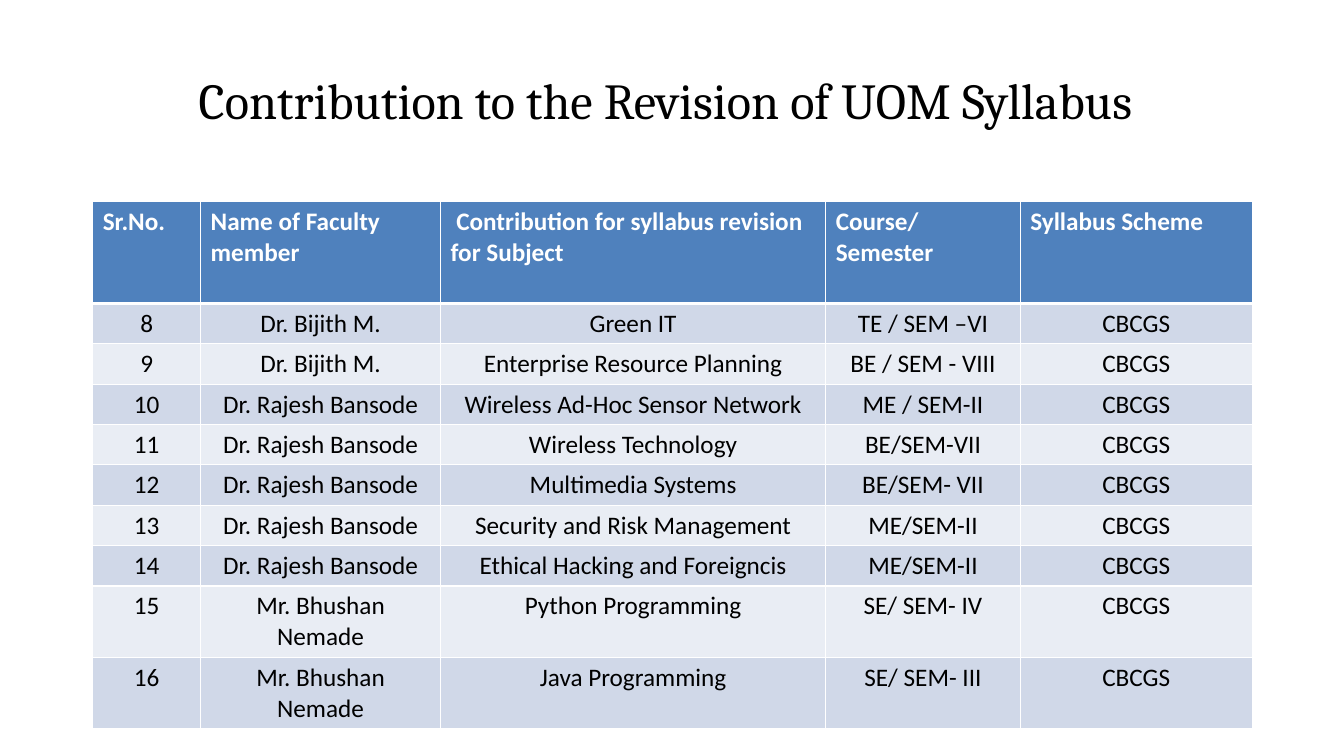
"""Build the slide on contributions to the syllabus revision."""
from pptx import Presentation
from pptx import util as u
from pptx.dml import color
from pptx.enum import text
from pptx.oxml import ns
from lxml import etree

TITLE = "Contribution to the Revision of UOM Syllabus"
HEADER = ("Sr.No.", "Name of Faculty member",
          " Contribution for syllabus revision for Subject",
          "Course/\nSemester", "Syllabus Scheme")
FIRST_NO = 8
SCHEME = "CBCGS"
ENTRIES = [
    ("Dr. Bijith M.", "Green IT", "TE / SEM –VI"),
    ("Dr. Bijith M.", "Enterprise Resource Planning", "BE / SEM - VIII"),
    ("Dr. Rajesh Bansode", "Wireless Ad-Hoc Sensor Network", "ME / SEM-II"),
    ("Dr. Rajesh Bansode", "Wireless Technology", "BE/SEM-VII"),
    ("Dr. Rajesh Bansode", "Multimedia Systems", "BE/SEM- VII"),
    ("Dr. Rajesh Bansode", "Security and Risk Management", "ME/SEM-II"),
    ("Dr. Rajesh Bansode", "Ethical Hacking and Foreigncis", "ME/SEM-II"),
    ("Mr. Bhushan Nemade", "Python Programming", "SE/ SEM- IV"),
    ("Mr. Bhushan Nemade", "Java Programming", "SE/ SEM- III"),
]
COL_WIDTHS = (1.07, 2.38, 3.82, 1.93, 2.3)
ROW_HEIGHTS = [1.01] + [0.4] * 7 + [0.71] * 2
BANDS = ("D0D8E8", "E9EDF4")
HEADER_FILL, WHITE, BLACK = "4F81BD", "FFFFFF", "000000"


def rgb(value):
    return color.RGBColor.from_string(value)


def style(p, font, size, hue, align, bold=False):
    p.alignment = align
    p.font.name, p.font.size, p.font.bold = font, u.Pt(size), bold
    p.font.color.rgb = rgb(hue)


def add_borders(cell, top, bottom):
    tc_pr = cell._tc.get_or_add_tcPr()
    for side, width in (("L", 1), ("R", 1), ("T", top), ("B", bottom)):
        ln = etree.SubElement(tc_pr, ns.qn("a:ln" + side), w=str(u.Pt(width)))
        fill = etree.SubElement(ln, ns.qn("a:solidFill"))
        etree.SubElement(fill, ns.qn("a:srgbClr"), val=WHITE)


def add_title(s):
    box = s.shapes.add_textbox(u.Inches(0.6), u.Inches(0.36), u.Inches(12), u.Inches(1.25))
    tf = box.text_frame
    tf.word_wrap = True
    tf.vertical_anchor = text.MSO_ANCHOR.MIDDLE
    tf.text = TITLE
    style(tf.paragraphs[0], "Cambria", 36, BLACK, text.PP_ALIGN.CENTER)


def add_syllabus_table(s):
    rows = [HEADER] + [(str(n), *entry, SCHEME) for n, entry in enumerate(ENTRIES, FIRST_NO)]
    table = s.shapes.add_table(len(rows), len(HEADER), u.Inches(0.92), u.Inches(2),
                               u.Inches(sum(COL_WIDTHS)), u.Inches(sum(ROW_HEIGHTS))).table
    for col, width in zip(table.columns, COL_WIDTHS):
        col.width = u.Inches(width)
    for i, (values, height) in enumerate(zip(rows, ROW_HEIGHTS)):
        table.rows[i].height = u.Inches(height)
        head = i == 0
        align = text.PP_ALIGN.LEFT if head else text.PP_ALIGN.CENTER
        for cell, value in zip(table.rows[i].cells, values):
            cell.text = value
            add_borders(cell, 3 if i == 1 else 1, 3 if head else 1)
            cell.fill.solid()
            cell.fill.fore_color.rgb = rgb(HEADER_FILL if head else BANDS[(i - 1) % 2])
            for p in cell.text_frame.paragraphs:
                style(p, "Calibri", 18, WHITE if head else BLACK, align, head)


def main():
    prs = Presentation()
    prs.slide_width, prs.slide_height = u.Inches(13.33), u.Inches(7.5)
    s = prs.slides.add_slide(prs.slide_layouts[6])
    add_title(s)
    add_syllabus_table(s)
    prs.save("out.pptx")


if __name__ == "__main__":
    main()
